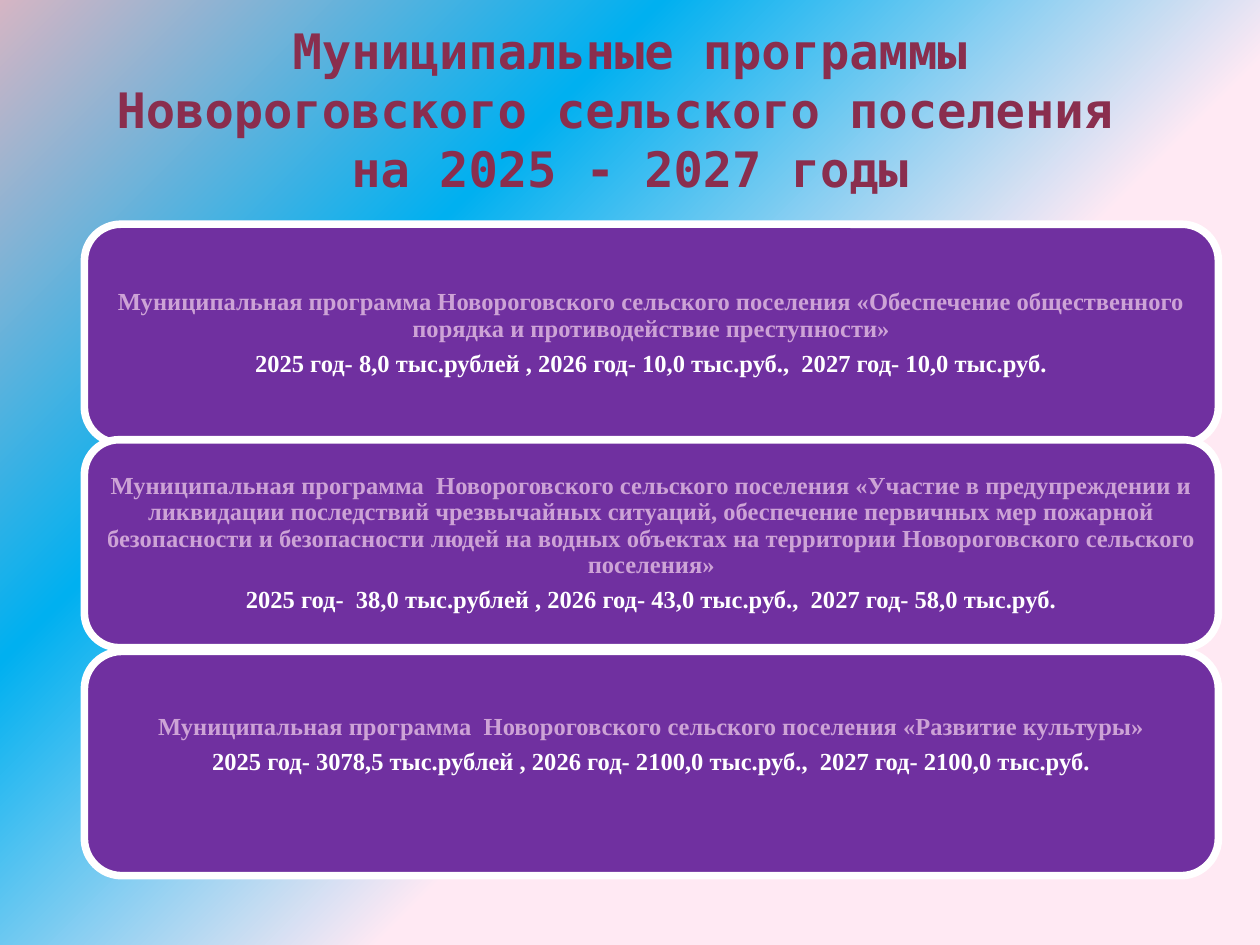
from dataclasses import dataclass

from lxml import etree
from pptx import Presentation
from pptx.dml.color import RGBColor
from pptx.enum.shapes import MSO_SHAPE
from pptx.enum.text import MSO_ANCHOR, PP_ALIGN
from pptx.oxml import parse_xml
from pptx.oxml.ns import nsdecls, qn
from pptx.slide import Slide
from pptx.util import Inches, Pt

PURPLE = RGBColor(0x70, 0x30, 0xA0)
LILAC = RGBColor(0xCD, 0xA3, 0xD6)
WHITE = RGBColor(0xFF, 0xFF, 0xFF)
WINE = RGBColor(0x8A, 0x2E, 0x4E)
GRADIENT = ((40, RGBColor(0xFF, 0xE9, 0xF3)),
            (70, RGBColor(0x00, 0xB0, 0xF0)),
            (100, RGBColor(0xD5, 0xB5, 0xC4)))

TITLE = "Муниципальные программы Новороговского сельского поселения \vна 2025 - 2027 годы"
TITLE_FONT = {"name": "DejaVu Sans Mono", "size": Pt(27.9), "bold": True}
CARD_FONT = {"name": "Times New Roman", "size": Pt(14), "bold": True}
CARD_LEFT, CARD_WIDTH = 0.67, 9


@dataclass
class Program:
    top: float
    height: float
    name: str
    budget: str
    bottom_inset: float = 0.06


PROGRAMS = [
    Program(1.78, 1.74,
            "Муниципальная программа Новороговского сельского поселения "
            "«Обеспечение общественного порядка и противодействие преступности»",
            "2025 год- 8,0 тыс.рублей , 2026 год- 10,0 тыс.руб.,  2027 год- 10,0 тыс.руб."),
    Program(3.49, 1.65,
            "Муниципальная программа  Новороговского сельского поселения "
            "«Участие в предупреждении и ликвидации последствий чрезвычайных ситуаций, "
            "обеспечение первичных мер пожарной безопасности и безопасности людей "
            "на водных объектах на территории Новороговского сельского поселения»",
            "2025 год-  38,0 тыс.рублей , 2026 год- 43,0 тыс.руб.,  2027 год- 58,0 тыс.руб."),
    Program(5.17, 1.78,
            "Муниципальная программа  Новороговского сельского поселения «Развитие культуры»",
            "2025 год- 3078,5 тыс.рублей , 2026 год- 2100,0 тыс.руб.,  2027 год- 2100,0 тыс.руб.",
            bottom_inset=0.36),
]


def set_background(s: Slide) -> None:
    """Fill the slide with a circular gradient centred on the bottom right corner."""
    s.background.fill.solid()
    bg_pr = s.element.find(".//" + qn("p:bgPr"))
    bg_pr.remove(bg_pr.find(qn("a:solidFill")))
    grad = parse_xml(f'<a:gradFill {nsdecls("a")} rotWithShape="1"><a:gsLst/>'
                     '<a:path path="circle"><a:fillToRect l="100000" t="100000"/></a:path>'
                     '<a:tileRect r="-100000" b="-100000"/></a:gradFill>')
    for position, color in GRADIENT:
        stop = etree.SubElement(grad[0], qn("a:gs"), pos=str(position * 1000))
        etree.SubElement(stop, qn("a:srgbClr"), val=str(color))
    bg_pr.insert(0, grad)


def format_frame(tf, **insets: float) -> None:
    tf.word_wrap = True
    tf.vertical_anchor = MSO_ANCHOR.MIDDLE
    for side, inset in insets.items():
        setattr(tf, f"margin_{side}", Inches(inset))


def write(p, text: str, font: dict, color: RGBColor) -> None:
    p.text = text
    p.alignment = PP_ALIGN.CENTER
    for r in p.runs:
        for key, value in font.items():
            setattr(r.font, key, value)
        r.font.color.rgb = color


def add_title(s: Slide) -> None:
    tf = s.shapes.add_textbox(Inches(0.5), Inches(0.3), Inches(9), Inches(1.25)).text_frame
    format_frame(tf, bottom=0.17)
    write(tf.paragraphs[0], TITLE, TITLE_FONT, WINE)


def add_card(s: Slide, program: Program) -> None:
    sp = s.shapes.add_shape(MSO_SHAPE.ROUNDED_RECTANGLE, Inches(CARD_LEFT), Inches(program.top),
                            Inches(CARD_WIDTH), Inches(program.height))
    sp.shadow.inherit = False
    sp.fill.solid()
    sp.fill.fore_color.rgb = PURPLE
    sp.line.color.rgb = WHITE
    sp.line.width = Pt(4.33)
    tf = sp.text_frame
    format_frame(tf, left=0.04, right=0.04, top=0.06, bottom=program.bottom_inset)
    write(tf.paragraphs[0], program.name, CARD_FONT, LILAC)
    write(tf.add_paragraph(), program.budget, CARD_FONT, WHITE)
    for p in tf.paragraphs:
        p.line_spacing = 0.9
        p.space_after = Pt(4.9)


def main() -> None:
    prs = Presentation()
    prs.slide_width, prs.slide_height = Inches(10), Inches(7.5)
    s = prs.slides.add_slide(prs.slide_layouts[6])
    set_background(s)
    for program in PROGRAMS:
        add_card(s, program)
    add_title(s)
    prs.save("out.pptx")


if __name__ == "__main__":
    main()
